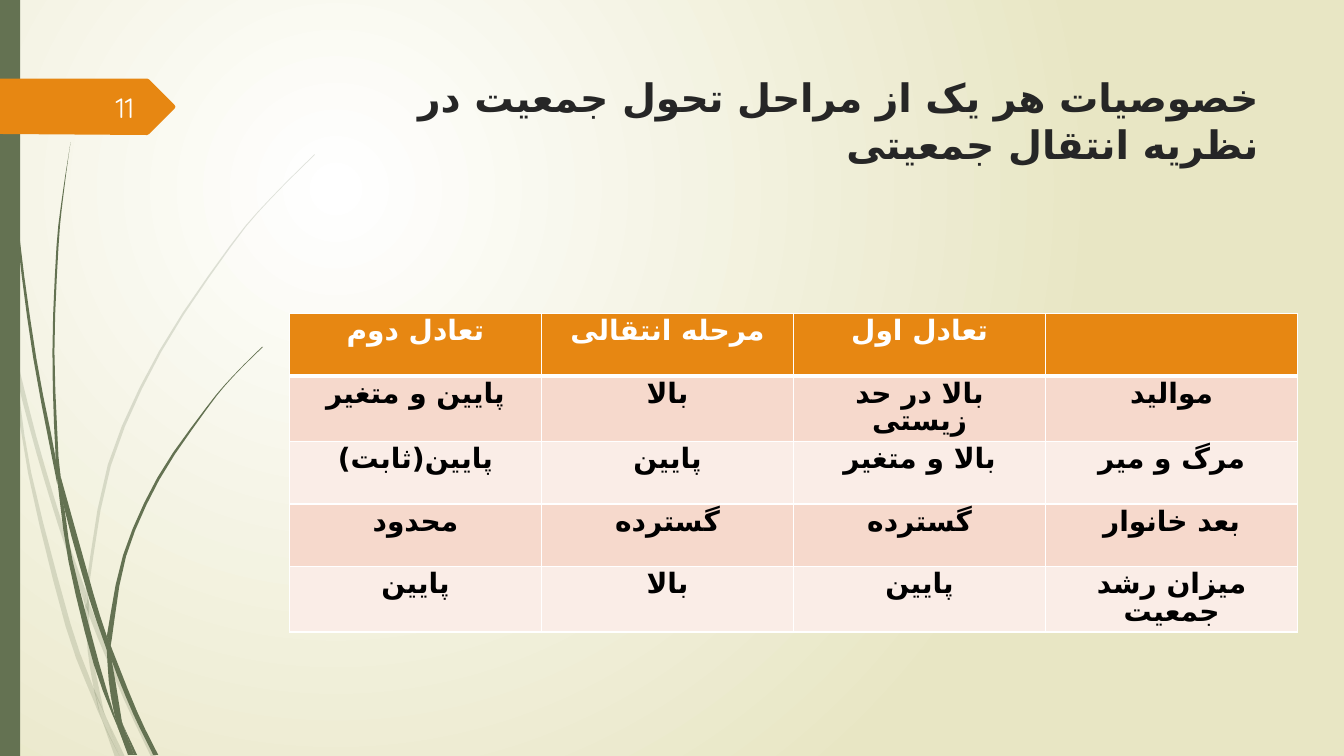
from lxml import etree
from pptx import Presentation
from pptx.dml.color import RGBColor
from pptx.enum.shapes import MSO_SHAPE
from pptx.enum.text import MSO_ANCHOR, PP_ALIGN
from pptx.oxml.ns import qn
from pptx.util import Inches, Pt

RIGHT, CENTER = PP_ALIGN.RIGHT, PP_ALIGN.CENTER
TOP, MIDDLE = MSO_ANCHOR.TOP, MSO_ANCHOR.MIDDLE

# Content
TITLE = "خصوصیات هر یک از مراحل تحول جمعیت در نظریه انتقال جمعیتی"
PAGE_NUMBER = "11"
TABLE_ROWS = [
    ("تعادل دوم", "مرحله انتقالی", "تعادل اول", ""),
    ("پایین و متغیر", "بالا", "بالا در حد زیستی", "موالید"),
    ("پایین(ثابت)", "پایین", "بالا و متغیر", "مرگ و میر"),
    ("محدود", "گسترده", "گسترده", "بعد خانوار"),
    ("پایین", "بالا", "پایین", "میزان رشد جمعیت"),
]

# Style and layout, in inches
FONT, PERSIAN_FONT = "Quicksand", "DejaVu Sans"
COLORS = {
    "white": "FFFFFF", "sand": "E8E6C4", "moss": "647252", "orange": "E78712",
    "title": "262626", "black": "000000", "number": "FEFFFF",
    "odd_row": "F6D9CC", "even_row": "FAEDE7",
}
WIDTH, HEIGHT = 13.33, 7.5
TITLE_BOX = (3, 0.68, 9.58, 0.87)
NUMBER_BOX = (0.58, 0.86, 0.85, 0.4)
TABLE_LEFT, TABLE_TOP, COLUMN, ROW = 2.87, 3.11, 2.5, 0.62
UNITS = 1000  # outline units per inch
TAG = [(0, 0.78), (1.46, 0.78), (1.48, 0.79), (1.73, 1.04), (1.74, 1.06),
       (1.73, 1.08), (1.48, 1.33), (1.46, 1.34), (0, 1.33)]

# Grass blade segments: left edge and right edge, each from top to bottom
PALE_GRASS = [
    ([(0, 2.82), (0, 2.99), (0.1, 3.44), (0.11, 3.5)], [(0, 2.82), (0.09, 3.22), (0.11, 3.5)]),
    ([(0.14, 3.45), (0.17, 3.76), (0.36, 4.49), (0.58, 5.22), (0.84, 5.99)],
     [(0.14, 3.45), (0.36, 4.33), (0.62, 5.2), (0.85, 5.86)]),
    ([(0.88, 5.96), (0.88, 6.1), (1.23, 6.94), (1.5, 7.51)],
     [(0.88, 5.96), (0.92, 6.07), (1.27, 6.92), (1.55, 7.51)]),
    ([(1.05, 7.11), (1.19, 7.51)], [(1.05, 7.11), (1.24, 7.51)]),
    ([(0.11, 3.5), (0.28, 4.7), (0.65, 6.21), (0.92, 6.93), (1.01, 7.14)],
     [(0.11, 3.5), (0.17, 3.76), (0.31, 4.69), (0.7, 6.19), (0.93, 6.83), (0.99, 7.07)]),
    ([(0.84, 5.99), (0.87, 6.46), (0.93, 6.83), (0.96, 6.92), (1.05, 7.11)],
     [(0.84, 5.99), (0.88, 6.08), (0.91, 6.46), (1.03, 7.06)]),
    ([(3.12, 1.53), (2.68, 1.97), (2.28, 2.44), (1.58, 3.48), (1.07, 4.61), (0.85, 5.84)],
     [(3.12, 1.54), (2.68, 1.98), (2.29, 2.45), (1.6, 3.49), (1.1, 4.62), (0.88, 5.84),
      (0.88, 5.96)]),
    ([(1.01, 7.14), (1.14, 7.51)], [(1.01, 7.14), (1.19, 7.51)]),
    ([(0.85, 5.86), (0.84, 5.99), (0.88, 6.08)], [(0.85, 5.86), (0.88, 5.96), (0.88, 6.1)]),
    ([(0.93, 6.83), (1.01, 7.14), (1.19, 7.51)], [(0.93, 6.83), (1.05, 7.11), (1.19, 7.51)]),
]
DARK_GRASS = [
    ([(0.03, 0), (0.07, 1.1), (0.17, 2.33), (0.33, 3.55), (0.57, 4.81)],
     [(0.04, 0), (0.08, 1.09), (0.19, 2.32), (0.36, 3.55), (0.55, 4.53), (0.57, 4.81)]),
    ([(0.6, 4.72), (0.64, 5.05), (0.88, 5.92), (1.06, 6.45)],
     [(0.6, 4.72), (0.93, 5.9), (1.06, 6.31)]),
    ([(1.1, 6.41), (1.11, 6.56), (1.32, 7.08), (1.52, 7.49)],
     [(1.1, 6.41), (1.36, 7.06), (1.57, 7.49)]),
    ([(0.57, 4.77), (0.68, 5.57), (0.93, 6.59), (1.17, 7.22)],
     [(0.57, 4.77), (0.64, 5.05), (0.72, 5.56), (0.98, 6.57), (1.16, 7.17)]),
    ([(0.7, 1.41), (0.62, 1.93), (0.56, 2.45), (0.52, 3.49), (0.55, 4.49), (0.6, 4.72)],
     [(0.7, 1.41), (0.63, 1.93), (0.58, 2.45), (0.54, 3.49), (0.58, 4.53)]),
    ([(1.22, 7.19), (1.33, 7.49)], [(1.22, 7.19), (1.36, 7.49)]),
    ([(0.55, 4.49), (0.57, 4.77), (0.64, 5.05)], [(0.55, 4.49), (0.6, 4.72), (0.64, 5.05)]),
    ([(2.6, 3.44), (2.31, 3.73), (2.04, 4.05), (1.56, 4.74), (1.22, 5.51), (1.06, 6.31)],
     [(2.61, 3.44), (2.31, 3.74), (2.05, 4.06), (1.58, 4.76), (1.25, 5.52), (1.11, 6.33),
      (1.1, 6.41)]),
    ([(1.17, 7.22), (1.27, 7.49)], [(1.17, 7.22), (1.31, 7.49)]),
    ([(1.06, 6.45), (1.1, 6.91), (1.22, 7.19)], [(1.06, 6.45), (1.11, 6.56), (1.21, 7.16)]),
    ([(1.06, 6.31), (1.06, 6.45), (1.11, 6.56)], [(1.06, 6.31), (1.1, 6.41), (1.11, 6.56)]),
    ([(1.1, 6.91), (1.17, 7.22), (1.3, 7.49)], [(1.1, 6.91), (1.22, 7.19), (1.33, 7.49)]),
]


def rgb(name):
    return RGBColor.from_string(COLORS[name])


def write_text(frame, text, *, size, color, align, bold=False, rtl=False,
               anchor=TOP, spacing=1.0):
    frame.word_wrap = True
    frame.vertical_anchor = anchor
    paragraph = frame.paragraphs[0]
    paragraph.alignment, paragraph.line_spacing = align, spacing
    run = paragraph.add_run()
    run.text = text
    run.font.size, run.font.bold, run.font.name = Pt(size), bold, FONT
    run.font.color.rgb = rgb(color)
    if rtl:
        paragraph._p.get_or_add_pPr().set("rtl", "1")
        etree.SubElement(run._r.get_or_add_rPr(), qn("a:cs"), typeface=PERSIAN_FONT)


def paint(shape, color, alpha=None):
    shape.shadow.inherit = False
    shape.fill.solid()
    shape.fill.fore_color.rgb = rgb(color)
    shape.line.fill.background()
    if alpha:
        tone = shape._element.spPr.find(".//" + qn("a:srgbClr"))
        etree.SubElement(tone, qn("a:alpha"), val=str(alpha * 1000))


def smooth(points, steps=3):
    """Pass a Catmull-Rom curve through the points."""
    padded = [points[0], *points, points[-1]]
    curve = [points[0]]
    for corners in zip(padded, padded[1:], padded[2:], padded[3:]):
        for t in (step / steps for step in range(1, steps + 1)):
            curve.append(tuple(
                0.5 * (2 * q + (r - p) * t + (2 * p - 5 * q + 4 * r - s) * t ** 2
                       + (3 * q - p - 3 * r + s) * t ** 3)
                for p, q, r, s in zip(*corners)))
    return curve


def add_outline(slide, points, color, alpha=None):
    start, *rest = [(x * UNITS, y * UNITS) for x, y in points]
    builder = slide.shapes.build_freeform(*start, scale=Inches(1) / UNITS)
    builder.add_line_segments(rest, close=True)
    paint(builder.convert_to_shape(), color, alpha)


def set_background(slide):
    fill = slide.background.fill
    fill.gradient()
    for stop, color, position in zip(fill.gradient_stops, ("white", "sand"), (0, 1)):
        stop.color.rgb, stop.position = rgb(color), position
    gradient = slide.element.find(".//" + qn("a:gradFill"))
    gradient.remove(gradient.find(qn("a:lin")))
    circle = etree.SubElement(gradient, qn("a:path"), {"path": "circle"})
    etree.SubElement(circle, qn("a:fillToRect"), l="50000", t="50000", r="100000", b="100000")


def set_borders(cell, bottom, top):
    properties = cell._tc.get_or_add_tcPr()
    sides = (("a:lnL", 1), ("a:lnR", 1), ("a:lnT", top), ("a:lnB", bottom))
    for index, (side, points) in enumerate(sides):
        line = etree.Element(qn(side), w=str(Pt(points)))
        fill = etree.SubElement(line, qn("a:solidFill"))
        etree.SubElement(fill, qn("a:srgbClr"), val=COLORS["white"])
        properties.insert(index, line)


def add_stage_table(slide):
    rows, columns = len(TABLE_ROWS), len(TABLE_ROWS[0])
    box = (TABLE_LEFT, TABLE_TOP, COLUMN * columns, ROW * rows)
    table = slide.shapes.add_table(rows, columns, *map(Inches, box)).table
    for r, texts in enumerate(TABLE_ROWS):
        fill = "orange" if r == 0 else "odd_row" if r % 2 else "even_row"
        for c, text in enumerate(texts):
            cell = table.cell(r, c)
            cell.fill.solid()
            cell.fill.fore_color.rgb = rgb(fill)
            set_borders(cell, bottom=3 if r == 0 else 1, top=3 if r == 1 else 1)
            if text:
                write_text(cell.text_frame, text, size=20, bold=True, rtl=True, align=CENTER,
                           color="black" if r else "white", spacing=0.85)


def main():
    presentation = Presentation()
    presentation.slide_width, presentation.slide_height = Inches(WIDTH), Inches(HEIGHT)
    slide = presentation.slides.add_slide(presentation.slide_layouts[5])
    set_background(slide)
    # Grass, side bar and number tag
    for segments, alpha in ((PALE_GRASS, 20), (DARK_GRASS, None)):
        for left_edge, right_edge in segments:
            add_outline(slide, smooth(left_edge) + smooth(right_edge)[::-1], "moss", alpha)
    bar = slide.shapes.add_shape(MSO_SHAPE.RECTANGLE, 0, 0, Inches(0.2), Inches(HEIGHT))
    paint(bar, "moss")
    add_outline(slide, TAG, "orange")
    # Title, table and page number
    title = slide.shapes.title
    title.left, title.top, title.width, title.height = map(Inches, TITLE_BOX)
    write_text(title.text_frame, TITLE, size=28, color="title", align=RIGHT, bold=True, rtl=True)
    add_stage_table(slide)
    number = slide.shapes.add_textbox(*map(Inches, NUMBER_BOX))
    write_text(number.text_frame, PAGE_NUMBER, size=20, color="number", align=RIGHT, anchor=MIDDLE)
    presentation.save("out.pptx")


if __name__ == "__main__":
    main()
